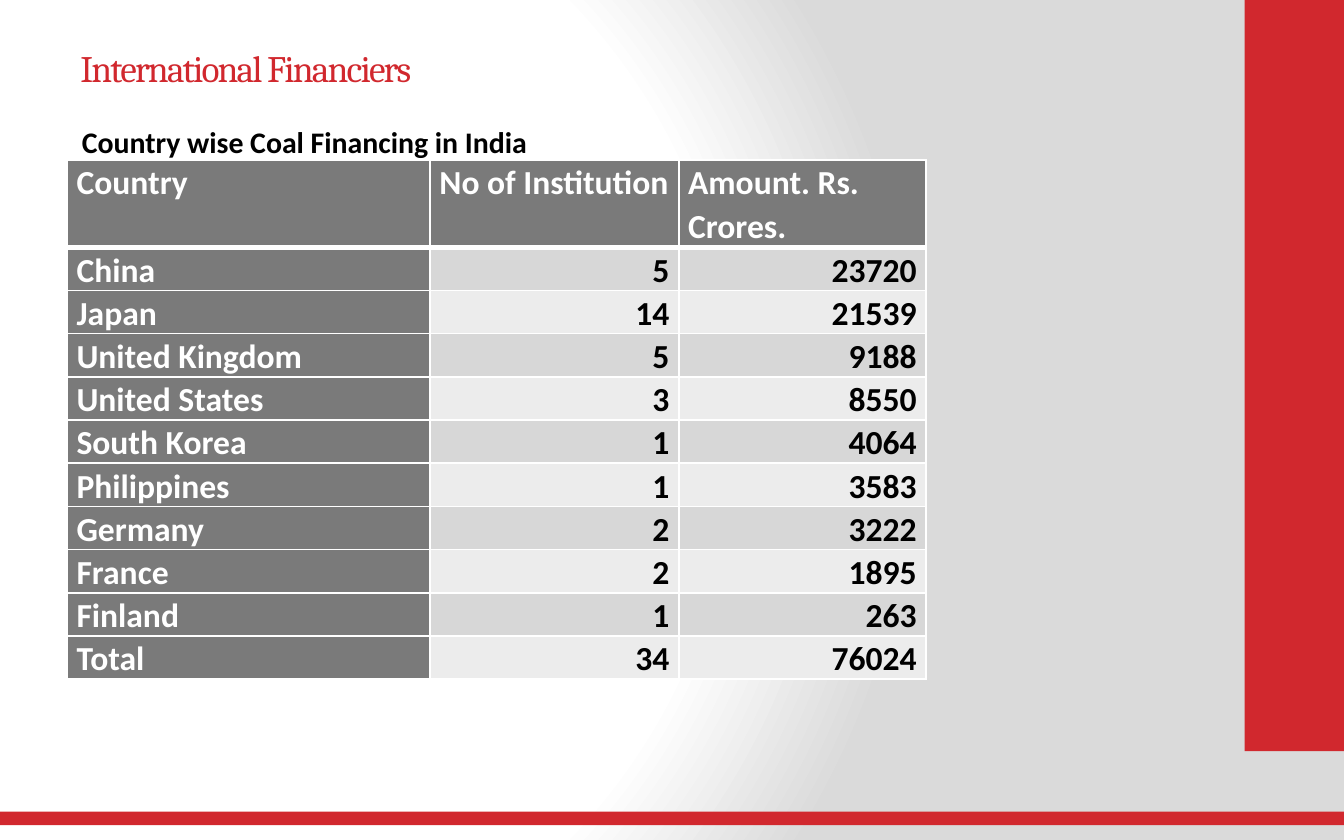
import pptx
import pptx.dml.color
import pptx.enum.shapes
import pptx.enum.text
import pptx.oxml
import pptx.oxml.ns
import pptx.util

RGB = pptx.dml.color.RGBColor
RED = RGB(0xD1, 0x28, 0x2E)
BLACK = RGB(0x00, 0x00, 0x00)
WHITE = RGB(0xFF, 0xFF, 0xFF)
SILVER = RGB(0xDA, 0xDA, 0xDA)
GREY = RGB(0x7A, 0x7A, 0x7A)
BANDS = [RGB(0xD7, 0xD7, 0xD7), RGB(0xEC, 0xEC, 0xEC)]

ANCHOR = pptx.enum.text.MSO_ANCHOR
ALIGN = pptx.enum.text.PP_ALIGN
NS = pptx.oxml.ns.nsdecls("a")
PX = 9144  # 100 px to the inch

HEADER = ["Country", "No of Institution", "Amount. Rs. Crores."]
FINANCING = [
    ("China", 5, 23720),
    ("Japan", 14, 21539),
    ("United Kingdom", 5, 9188),
    ("United States", 3, 8550),
    ("South Korea", 1, 4064),
    ("Philippines", 1, 3583),
    ("Germany", 2, 3222),
    ("France", 2, 1895),
    ("Finland", 1, 263),
    ("Total", 34, 76024),
]


def px(*lengths):
    return [pptx.util.Emu(n * PX) for n in lengths]


def apply(obj, values):
    for name, value in values.items():
        setattr(obj, name, value)


class SlideBuilder:
    title_font = {"name": "Cambria", "size": pptx.util.Pt(20), "bold": False}
    body_font = {"name": "Calibri", "size": pptx.util.Pt(16), "bold": True}
    cell_font = {"name": "Calibri", "size": pptx.util.Pt(18), "bold": True}
    cell_margins = dict(zip(
        ["margin_left", "margin_top", "margin_right", "margin_bottom"],
        px(7, 0, 7, 0)))

    def __init__(self, s):
        self.s = s

    def background(self, stops, center):
        """Fill the slide with a circular gradient that starts at center."""
        self.s.background.fill.gradient()
        old = self.s.element.find(".//" + pptx.oxml.ns.qn("a:gradFill"))
        gs = "".join(
            f'<a:gs pos="{pos * 1000}"><a:srgbClr val="{color}"/></a:gs>'
            for pos, color in stops)
        rect = " ".join(f'{side}="{n * 1000}"' for side, n in zip("ltrb", center))
        old.getparent().replace(old, pptx.oxml.parse_xml(
            f'<a:gradFill {NS} rotWithShape="1"><a:gsLst>{gs}</a:gsLst>'
            f'<a:path path="circle"><a:fillToRect {rect}/></a:path></a:gradFill>'))

    def bar(self, *box):
        sp = self.s.shapes.add_shape(
            pptx.enum.shapes.MSO_SHAPE.RECTANGLE, *px(*box))
        sp.shadow.inherit = False
        sp.fill.solid()
        sp.fill.fore_color.rgb = RED
        sp.line.fill.background()

    def text(self, text, box, font, color, frame, spacing=0):
        tf = self.s.shapes.add_textbox(*px(*box)).text_frame
        apply(tf, {"word_wrap": True, **frame})
        r = tf.paragraphs[0].add_run()
        r.text = text
        apply(r.font, font)
        r.font.color.rgb = color
        if spacing:
            r.font._element.set("spc", str(spacing * 100))

    def cell(self, cell, text, fill, color, align, borders):
        """Fill one table cell; borders gives points for left, right, top, bottom."""
        apply(cell, self.cell_margins)
        p = cell.text_frame.paragraphs[0]
        apply(p, {"alignment": align, "line_spacing": 1.07})
        r = p.add_run()
        r.text = text
        apply(r.font, self.cell_font)
        r.font.color.rgb = color
        tc_pr = cell._tc.get_or_add_tcPr()
        for side, width in zip("LRTB", borders):
            tc_pr.append(pptx.oxml.parse_xml(
                f'<a:ln{side} {NS} w="{pptx.util.Pt(width)}"><a:solidFill>'
                f'<a:srgbClr val="{WHITE}"/></a:solidFill></a:ln{side}>'))
        cell.fill.solid()
        cell.fill.fore_color.rgb = fill

    def table(self, left, top, widths, header_height, row_height):
        rows = [HEADER, *FINANCING]
        heights = [header_height] + [row_height] * len(FINANCING)
        table = self.s.shapes.add_table(
            len(rows), len(widths),
            *px(left, top, sum(widths), sum(heights))).table
        for column, width in zip(table.columns, px(*widths)):
            column.width = width
        for row, height in zip(table.rows, px(*heights)):
            row.height = height
        for i, values in enumerate(rows):
            borders = [1, 1, 3 if i == 1 else 1, 3 if i == 0 else 1]
            for j, value in enumerate(values):
                if i == 0 or j == 0:
                    look = GREY, WHITE, ALIGN.LEFT
                else:
                    look = BANDS[(i - 1) % 2], BLACK, ALIGN.RIGHT
                self.cell(table.cell(i, j), str(value), *look, borders)


def main():
    prs = pptx.Presentation()
    prs.slide_width, prs.slide_height = px(1000, 625)
    b = SlideBuilder(prs.slides.add_slide(prs.slide_layouts[6]))
    b.background([(0, WHITE), (75, WHITE), (100, SILVER)], (20, 50, 100, 50))
    b.bar(926, -1, 75, 560)
    b.bar(0, 604, 1000, 10)
    b.text("International Financiers", (50, 25, 833, 51), b.title_font, RED,
           {"vertical_anchor": ANCHOR.MIDDLE}, spacing=-1)
    b.text("Country wise Coal Financing in India", (39, 87, 833, 438),
           b.body_font, BLACK, {"margin_left": px(22)[0]})
    b.table(50, 119, [270, 185, 184], header_height=65, row_height=32)
    prs.save("out.pptx")


if __name__ == "__main__":
    main()
